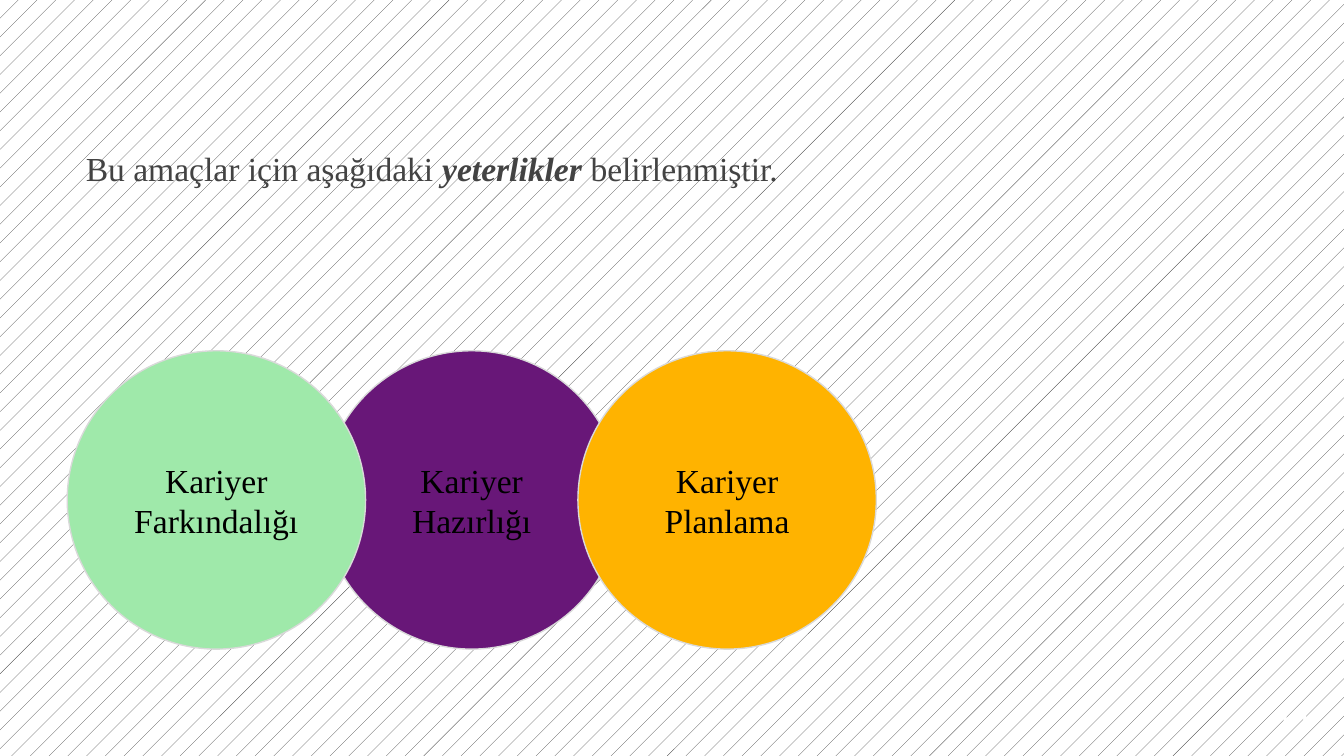
from pptx import Presentation
from pptx.dml.color import RGBColor
from pptx.enum.dml import MSO_PATTERN
from pptx.enum.shapes import MSO_SHAPE
from pptx.enum.text import MSO_ANCHOR, PP_ALIGN
from pptx.util import Inches, Pt

DOTS = MSO_PATTERN.PERCENT_5
OVAL = MSO_SHAPE.OVAL
BOTTOM, MIDDLE = MSO_ANCHOR.BOTTOM, MSO_ANCHOR.MIDDLE
LEFT, CENTER, RIGHT = PP_ALIGN.LEFT, PP_ALIGN.CENTER, PP_ALIGN.RIGHT
SERIF = "Times New Roman"


def rgb(value):
    return RGBColor.from_string(value)


def write(sp, runs, anchor, align, font, color):
    tf = sp.text_frame
    tf.word_wrap = True
    tf.vertical_anchor = anchor
    tf.margin_left = tf.margin_right = Inches(0.1)
    tf.margin_top = tf.margin_bottom = Inches(0.1)
    p = tf.paragraphs[0]
    p.alignment = align
    for text, strong in runs:
        r = p.add_run()
        r.text = text
        r.font.name = font
        r.font.size = Pt(18)
        r.font.bold = r.font.italic = strong
        r.font.color.rgb = rgb(color)


prs = Presentation()
prs.slide_width = Inches(10)
prs.slide_height = Inches(10 * 9 / 16)
s = prs.slides.add_slide(prs.slide_layouts[6])

fill = s.background.fill
fill.patterned()
fill.pattern = DOTS
fill.fore_color.rgb = rgb("434343")
fill.back_color.rgb = rgb("FFFFFF")

title = s.shapes.add_textbox(Inches(0.54), Inches(0.56), Inches(6.03), Inches(0.94))
title_runs = [
    ("Bu amaçlar için aşağıdaki ", False),
    ("yeterlikler ", True),
    ("belirlenmiştir.", False),
]
write(title, title_runs, BOTTOM, LEFT, SERIF, "434343")

number = s.shapes.add_textbox(Inches(9.27), Inches(5.11), Inches(0.6), Inches(0.43))
write(number, [("11", False)], MIDDLE, RIGHT, "Lato", "FFFFFF")

circles = [
    (1, "Kariyer Hazırlığı", "681778"),
    (0, "Kariyer Farkındalığı", "9FE9AA"),
    (2, "Kariyer Planlama", "FFB300"),
]
for column, label, color in circles:
    sp = s.shapes.add_shape(
        OVAL, Inches(0.5 + 1.9 * column), Inches(2.61), Inches(2.22), Inches(2.22)
    )
    sp.shadow.inherit = False
    sp.fill.solid()
    sp.fill.fore_color.rgb = rgb(color)
    sp.line.color.rgb = rgb("D9D9D9")
    sp.line.width = Pt(0.75)
    write(sp, [(label, False)], MIDDLE, CENTER, SERIF, "000000")

prs.save("out.pptx")
